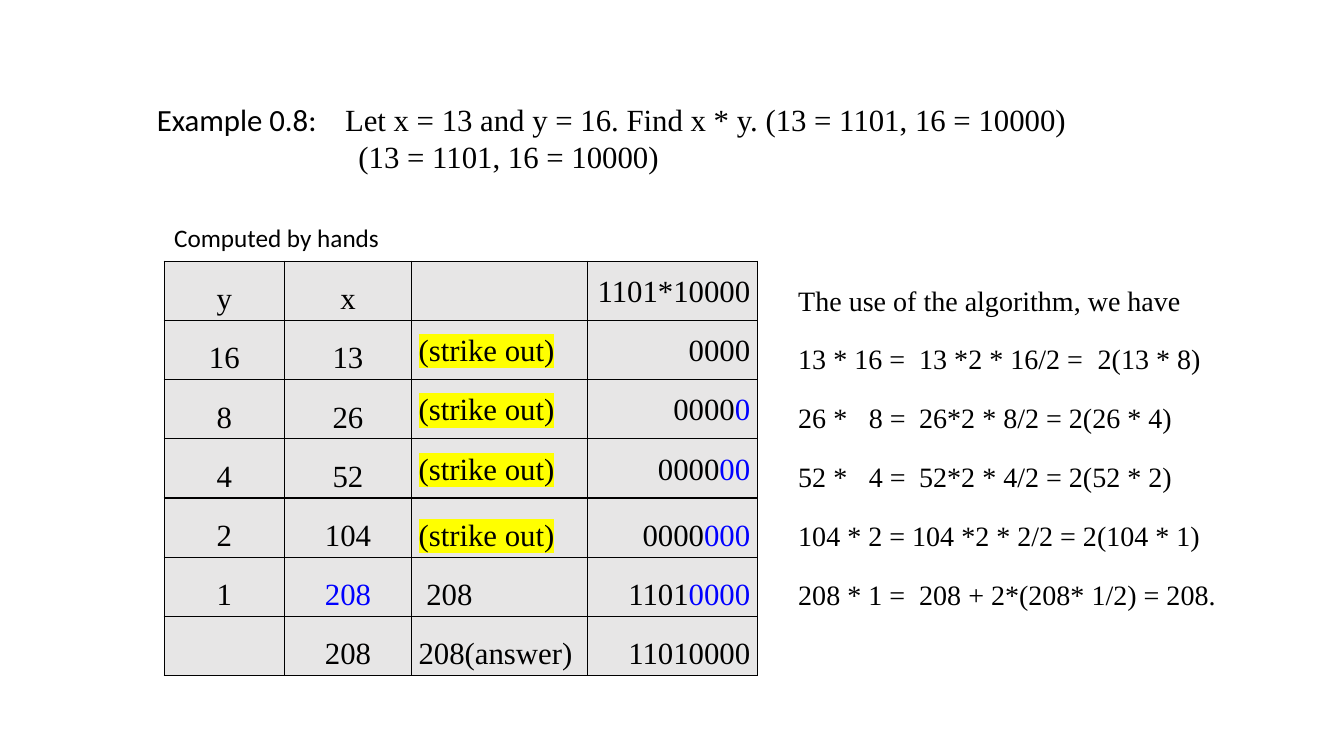
from lxml import etree
from pptx import Presentation
from pptx.dml.color import RGBColor
from pptx.enum.text import MSO_ANCHOR, PP_ALIGN
from pptx.oxml.ns import qn
from pptx.util import Inches, Pt

LEFT, CENTER, RIGHT = PP_ALIGN.LEFT, PP_ALIGN.CENTER, PP_ALIGN.RIGHT
MIDDLE = MSO_ANCHOR.MIDDLE
COLORS = {"ink": "000000", "shift": "0000FF", "mark": "FFFF00", "cell": "E7E6E6"}
SANS, SERIF = "Calibri", "Times New Roman"
COLUMNS, ROWS = 32, 18


class SlideBuilder:
    """Draws styled text and tables on one slide, placed on a 32 by 18 grid."""

    def __init__(self, deck):
        self.column = deck.slide_width / COLUMNS
        self.row = deck.slide_height / ROWS
        self.page = deck.slides.add_slide(deck.slide_layouts[6])

    def place(self, left, top, width, height):
        return (round(left * self.column), round(top * self.row),
                round(width * self.column), round(height * self.row))

    def add_span(self, para, text, size, font=SERIF, color="ink", mark=None):
        span = para.add_run()
        span.text = text
        span.font.size = Pt(size)
        span.font.color.rgb = RGBColor.from_string(COLORS[color])
        if mark:
            highlight = etree.SubElement(span.font._element, qn("a:highlight"))
            etree.SubElement(highlight, qn("a:srgbClr"), val=COLORS[mark])
        span.font.name = font

    def add_tabs(self, para, stops):
        tabs = etree.SubElement(para._p.get_or_add_pPr(), qn("a:tabLst"))
        for stop in stops:
            etree.SubElement(tabs, qn("a:tab"), pos=str(round(stop * self.column)), algn="l")

    def add_text(self, area, lines, size, stops=(), spacing=None, after=None):
        frame = self.page.shapes.add_textbox(*self.place(*area)).text_frame
        frame.word_wrap = True
        for index, spans in enumerate(lines):
            para = frame.paragraphs[0] if index == 0 else frame.add_paragraph()
            if spacing:
                para.line_spacing = spacing
            if after:
                para.space_after = Pt(after)
            if stops:
                self.add_tabs(para, stops)
            for text, font in spans:
                self.add_span(para, text, size, font)

    def add_borders(self, cell):
        properties = cell._tc.get_or_add_tcPr()
        for side in ("lnL", "lnR", "lnT", "lnB"):
            line = etree.SubElement(properties, qn(f"a:{side}"), w=str(Pt(1)))
            fill = etree.SubElement(line, qn("a:solidFill"))
            etree.SubElement(fill, qn("a:srgbClr"), val=COLORS["ink"])

    def add_cell(self, cell, spans, align, spacing, size):
        self.add_borders(cell)
        cell.fill.solid()
        cell.fill.fore_color.rgb = RGBColor.from_string(COLORS["cell"])
        cell.vertical_anchor = MIDDLE
        cell.margin_left = cell.margin_right = Inches(0.07)
        cell.margin_top = cell.margin_bottom = 0
        para = cell.text_frame.paragraphs[0]
        para.alignment = align
        para.line_spacing = spacing
        for text, color, mark in spans:
            self.add_span(para, text, size, color=color, mark=mark)

    def add_table(self, left, top, widths, row_height, records, aligns, spacing_of, size):
        area = self.place(left, top, sum(widths), row_height * len(records))
        table = self.page.shapes.add_table(len(records), len(widths), *area).table
        for column, width in zip(table.columns, widths):
            column.width = round(width * self.column)
        for r, record in enumerate(records):
            table.rows[r].height = round(row_height * self.row)
            for c, spans in enumerate(record):
                self.add_cell(table.cell(r, c), spans, aligns[c], spacing_of(r, c), size)


def plain(text):
    return [(text, "ink", None)] if text else []


def shifted(text):
    return [(text, "shift", None)] if text else []


def multiplication_records():
    records = [[plain(text) for text in ("y", "x", "", "1101*10000")]]
    for step in range(5):
        y, x = 16 >> step, 13 << step
        last = y == 1
        records.append([
            plain(str(y)),
            shifted(str(x)) if last else plain(str(x)),
            plain(f" {x}") if last else [("(strike out)", "ink", "mark")],
            plain("1101" if last else "0000") + shifted("0" * step),
        ])
    records.append([plain(text) for text in ("", "208", "208(answer)", "11010000")])
    return records


def cell_spacing(row, column):
    return 1.07 if column > 1 and row < 4 else 1.5


def main():
    deck = Presentation()
    deck.slide_width, deck.slide_height = Inches(13.33), Inches(7.5)
    slide = SlideBuilder(deck)

    slide.add_table(3.91, 6.22, (2.86, 3.03, 4.19, 4.04), 1.41, multiplication_records(),
                    (CENTER, CENTER, LEFT, RIGHT), cell_spacing, 22)

    problem = [
        [("Example 0.8:", SANS),
         ("\tLet x = 13 and y = 16. Find x * y. (13 = 1101, 16 = 10000)", SERIF)],
        [("\t\t(13 = 1101, 16 = 10000)", SERIF)],
    ]
    slide.add_text((3.5, 2.28, 24.38, 2.9), problem, 22, stops=(4.48, 4.8))

    steps = (
        "The use of the algorithm, we have",
        "13 * 16 =\t13 *2 * 16/2 =\t2(13 * 8)",
        "26 *\t8 =\t26*2 * 8/2 = 2(26 * 4)",
        "52 *\t4 =\t52*2 * 4/2 = 2(52 * 2)",
        "104 * 2 = 104 *2 * 2/2 = 2(104 * 1)",
        "208 * 1 =\t208 + 2*(208* 1/2) = 208.",
    )
    slide.add_text((18.77, 6.22, 11.4, 8.38), [[(step, SERIF)] for step in steps], 20,
                   stops=(1.68, 2.88, 7.13), spacing=1.5, after=6)
    slide.add_text((3.91, 5.18, 5.9, 0.96), [[("Computed by hands", SANS)]], 18)
    deck.save("out.pptx")


if __name__ == "__main__":
    main()
